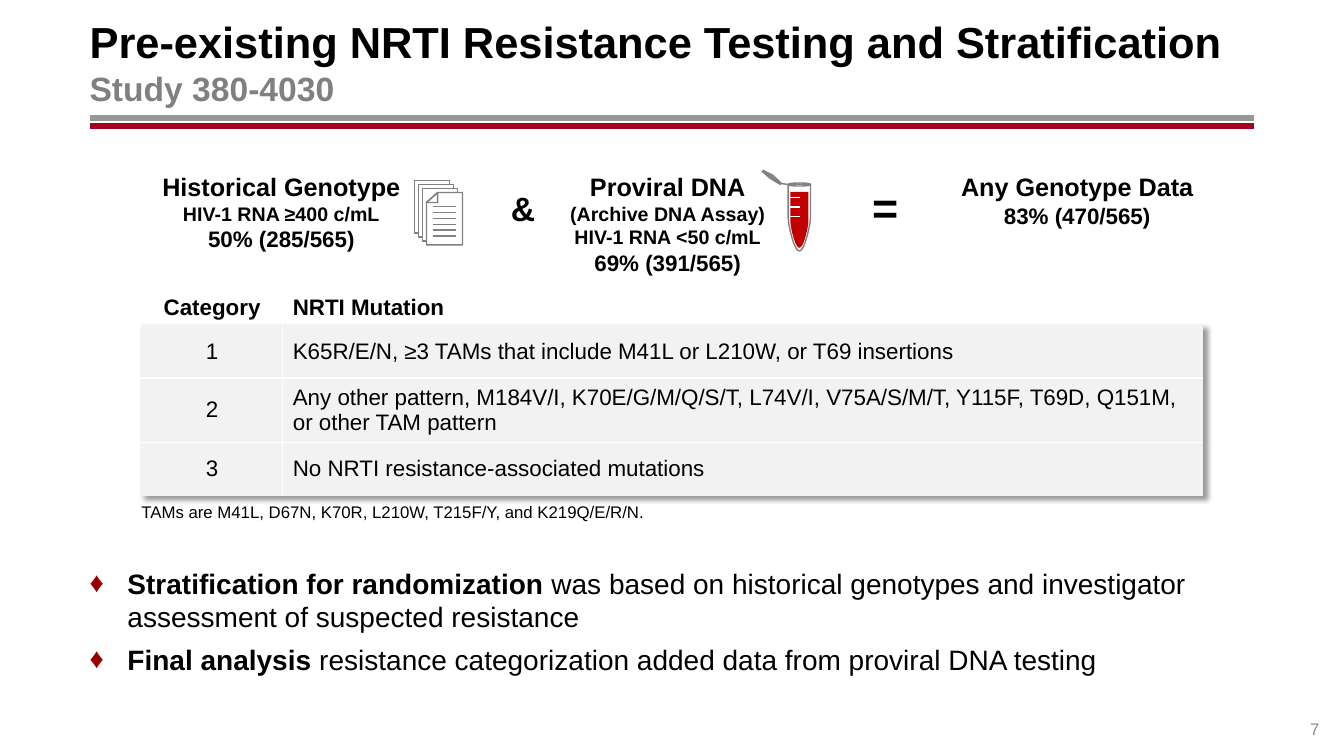
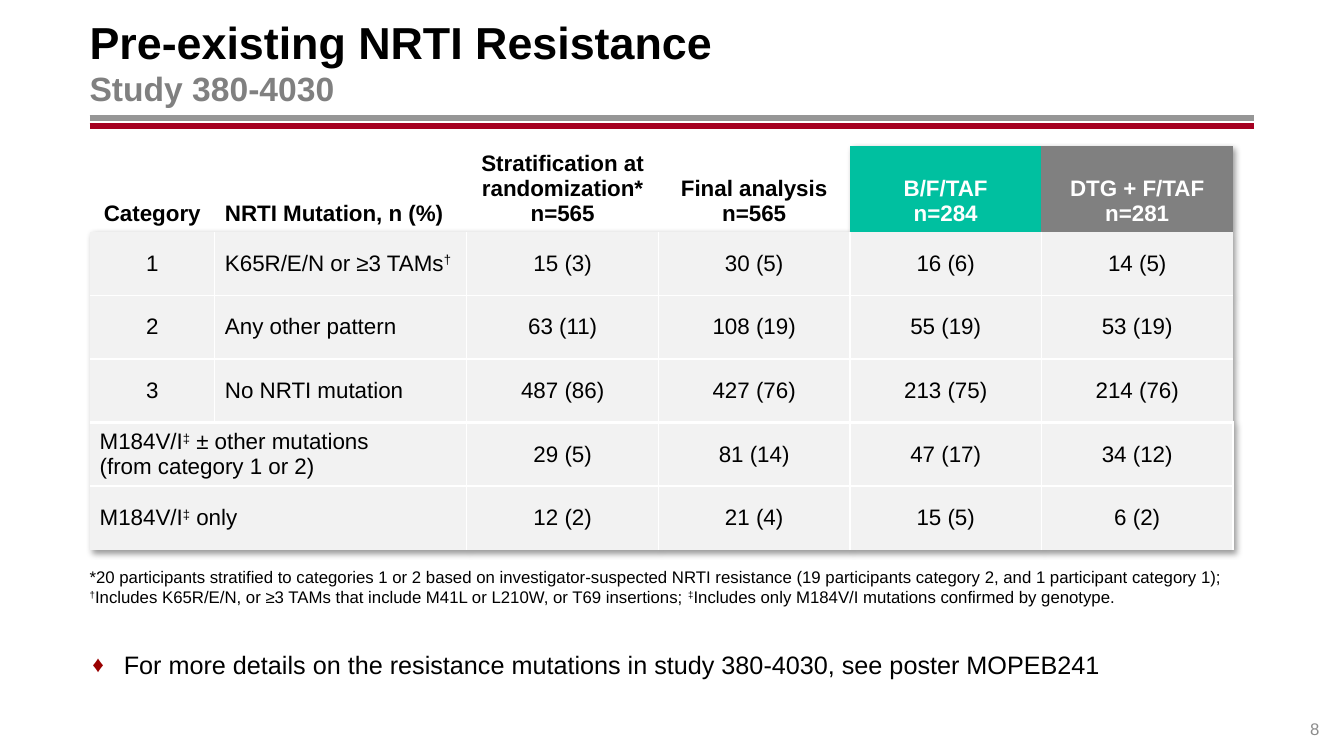
"""Build two slides on resistance testing and its results."""
from itertools import groupby

from lxml import etree
from pptx import Presentation
from pptx import util as u
from pptx.dml.color import RGBColor
from pptx.enum import shapes, text
from pptx.oxml.ns import qn

Pt = u.Pt
FONT = "Arial"
BLACK, WHITE, GRAY = "000000", "FFFFFF", "808080"
RED, RULE_GRAY, RULE_RED = "C00000", "969696", "A50021"
BULLET_RED, NUMBER_GRAY = "990000", "8C8C8C"
CELL_GRAY, TEAL = "F2F2F2", "00C0A0"
LEFT, WIDTH = 64, 832
NO_STYLE = "{2D5ABB26-0587-4C30-8999-92F81FD0307C}"
ALIGN = text.PP_ALIGN
ANCHOR = text.MSO_ANCHOR


def rgb(color):
    """Return the colour for a hex string."""
    return RGBColor.from_string(color)


def child(parent, tag, **attributes):
    """Append an XML element in the drawing namespace."""
    return etree.SubElement(parent, qn(f"a:{tag}"), **attributes)


def write(para, words, size=16, color=BLACK, bold=False):
    """Append text, raising dagger marks and breaking at newlines."""
    for index, line in enumerate(words.split("\n")):
        if index:
            child(para._p.add_br(), "rPr", sz=str(size * 100))
        for raised, letters in groupby(line, key=lambda letter: letter in "†‡"):
            span = para.add_run()
            span.text = "".join(letters)
            span.font.name = FONT
            span.font.size = Pt(size)
            span.font.bold = bold
            span.font.color.rgb = rgb(color)
            if raised:
                span.font._element.set("baseline", "30000")


def set_frame(frame, margins=(0, 0, 0, 0), anchor=ANCHOR.TOP, wrap=True):
    """Set the margins, anchor and wrapping of a text frame."""
    frame.auto_size = text.MSO_AUTO_SIZE.NONE
    frame.word_wrap = wrap
    frame.vertical_anchor = anchor
    (frame.margin_left, frame.margin_top,
     frame.margin_right, frame.margin_bottom) = map(Pt, margins)


def add_text(slide, place, paragraphs, align=ALIGN.LEFT, spacing=None, before=0,
             bullet=None, **layout):
    """Add a text box; each paragraph is a list of words and format pairs."""
    frame = slide.shapes.add_textbox(*map(Pt, place)).text_frame
    set_frame(frame, **layout)
    for index, spans in enumerate(paragraphs):
        para = frame.add_paragraph() if index else frame.paragraphs[0]
        para.alignment = align
        para.space_before = Pt(before)
        if spacing:
            para.line_spacing = spacing
        if bullet:
            add_bullet(para, **bullet)
        for words, style in spans:
            write(para, words, **style)


def add_bullet(para, indent, percent=100):
    """Give a paragraph a red diamond and a hanging indent."""
    props = para._p.get_or_add_pPr()
    props.set("marL", str(Pt(indent)))
    props.set("indent", str(-Pt(indent)))
    child(child(props, "buClr"), "srgbClr", val=BULLET_RED)
    child(props, "buSzPct", val=str(percent * 1000))
    child(props, "buFont", typeface=FONT)
    child(props, "buChar", char="♦")


def add_line(group, start, end, color=GRAY, width=1):
    """Add a straight line without shadow."""
    line = group.add_connector(shapes.MSO_CONNECTOR.STRAIGHT,
                               *map(Pt, (*start, *end)))
    line.line.color.rgb = rgb(color)
    line.line.width = Pt(width)
    child(line._element.spPr, "effectLst")


def paint(shape, fill=None, outline=GRAY):
    """Set the fill and outline of a shape."""
    shape.shadow.inherit = False
    if fill:
        shape.fill.solid()
        shape.fill.fore_color.rgb = rgb(fill)
    else:
        shape.fill.background()
    if outline:
        shape.line.color.rgb = rgb(outline)
        shape.line.width = Pt(1)
    else:
        shape.line.fill.background()


def add_outline(group, points, **colors):
    """Add a closed freeform through the points."""
    first, *others = [(Pt(x), Pt(y)) for x, y in points]
    builder = group.build_freeform(*first, scale=1.0)
    builder.add_line_segments(others, close=True)
    paint(builder.convert_to_shape(), **colors)


def curve(start, pull, push, end, steps=10):
    """Return points along a cubic curve."""
    points = []
    for step in range(steps + 1):
        t = step / steps
        weights = ((1 - t) ** 3, 3 * t * (1 - t) ** 2, 3 * t * t * (1 - t), t ** 3)
        points.append(tuple(
            sum(w * p for w, p in zip(weights, axis))
            for axis in zip(start, pull, push, end)))
    return points


def tube_points(center, half, top, side, bottom):
    """Return the outline of a tube with a rounded tip."""
    left = center - half
    wall = [(left, top)] + curve(
        (left, side), (left, side + 4), (center - half / 2, bottom), (center, bottom))
    return wall + [(2 * center - x, y) for x, y in reversed(wall)]


def add_tube(slide):
    """Draw the blood sample tube."""
    group = slide.shapes.add_group_shape().shapes
    add_outline(group, tube_points(571, 8, 131.5, 155.5, 179.3), fill=WHITE)
    add_outline(group, tube_points(571, 6.5, 137, 157.5, 177), fill=RED, outline=None)
    rim = group.add_shape(shapes.MSO_SHAPE.OVAL, *map(Pt, (563, 130.7, 16, 2.2)))
    paint(rim)
    lid = [(558, 131), (550.8, 126.7), (545, 121.7), (552.2, 125.3)]
    for shift in (0, 0.7):
        add_outline(group, [(x - shift, y + shift) for x, y in lid])
    add_line(group, (557.3, 131), (563, 131.8))
    for mark in range(3):
        height = 141 + 6.8 * mark
        add_line(group, (564.5, height), (571.5, height), color=WHITE)


def add_documents(slide):
    """Draw the stack of documents."""
    group = slide.shapes.add_group_shape().shapes
    for sheet in range(3):
        place = (296 + 2.9 * sheet, 129 + 2.9 * sheet, 25.2, 37.4)
        paint(group.add_shape(shapes.MSO_SHAPE.RECTANGLE, *map(Pt, place)), fill=WHITE)
    left, top, right, bottom = 304.6, 137.5, 330.3, 174.9
    fold = [(left, top + 7.2), (left + 8, top)]
    add_outline(group, fold + [(right, top), (right, bottom), (left, bottom)], fill=WHITE)
    add_outline(group, fold + [(left + 8, top + 7.2)])
    for row in range(6):
        height = 147.6 + 4.2 * row
        add_line(group, (309, height), (325.5, height))


def set_borders(cell, widths):
    """Draw white borders with widths keyed by side letter."""
    props = cell._tc.get_or_add_tcPr()
    for index, (side, width) in enumerate(widths.items()):
        line = child(props, f"ln{side}", w=str(Pt(width)))
        child(child(line, "solidFill"), "srgbClr", val=WHITE)
        props.insert(index, line)


def add_table_shadow(table):
    """Give a table no style and a soft shadow."""
    props = table._tbl.tblPr
    props.find(qn("a:tableStyleId")).text = NO_STYLE
    effects = child(props, "effectLst")
    shadow = child(effects, "outerShdw", blurRad=str(Pt(4)), dist=str(Pt(3)),
                   dir="2700000", algn="tl", rotWithShape="0")
    child(child(shadow, "srgbClr", val=BLACK), "alpha", val="40000")
    props.insert(0, effects)


def add_table(slide, place, widths, heights, rows, header_fills, thick):
    """Add a table; None joins a cell to the one on its left."""
    last_row, last_column = len(rows) - 1, len(widths) - 1
    frame = slide.shapes.add_table(len(rows), len(widths), *map(Pt, place),
                                   Pt(sum(widths)), Pt(sum(heights)))
    table = frame.table
    table.first_row = table.horz_banding = False
    add_table_shadow(table)
    for column, width in zip(table.columns, widths):
        column.width = Pt(width)
    for row, (height, values) in enumerate(zip(heights, rows)):
        table.rows[row].height = Pt(height)
        for column, value in enumerate(values):
            cell = table.cell(row, column)
            fill = CELL_GRAY if row else header_fills.get(column)
            if fill:
                cell.fill.solid()
                cell.fill.fore_color.rgb = rgb(fill)
            else:
                cell.fill.background()
            if row:
                sides = {"L": column > 0, "R": column < last_column,
                         "T": row > 1, "B": row < last_row}
                sizes = {"T": thick.get(row - 1, 1), "B": thick.get(row, 1)}
                set_borders(cell, {side: sizes.get(side, 1)
                                   for side, shown in sides.items() if shown})
            if value is None:
                table.cell(row, column - 1).merge(cell)
                continue
            cell.vertical_anchor = ANCHOR.MIDDLE if row else ANCHOR.BOTTOM
            para = cell.text_frame.paragraphs[0]
            joined = column < last_column and values[column + 1] is None
            para.alignment = ALIGN.LEFT if column == 1 or joined else ALIGN.CENTER
            colored_header = not row and column in header_fills
            write(para, value, bold=not row, color=WHITE if colored_header else BLACK)


def start_slide(deck, heading, size, number):
    """Add a slide with title, double rule and page number."""
    slide = deck.slides.add_slide(deck.slide_layouts[5])
    title = slide.shapes.title
    title.left, title.top, title.width, title.height = map(Pt, (LEFT, 13, WIDTH, 62))
    set_frame(title.text_frame, (0, 3.6, 7.2, 3.6), ANCHOR.MIDDLE)
    para = title.text_frame.paragraphs[0]
    para.alignment = ALIGN.LEFT
    write(para, heading + "\n", size=size, bold=True)
    write(para, "Study 380-4030", size=24, color=GRAY, bold=True)
    for height, color in ((84.2, RULE_GRAY), (90, RULE_RED)):
        add_line(slide.shapes, (LEFT, height), (LEFT + WIDTH, height), color, 4.25)
    add_text(slide, (896, 499, 46.5, 29), [[(str(number), {"size": 12, "color": NUMBER_GRAY})]],
             align=ALIGN.RIGHT, anchor=ANCHOR.BOTTOM)
    return slide


def add_testing_slide(deck):
    """Build the slide on testing and stratification."""
    slide = start_slide(deck, "Pre-existing NRTI Resistance Testing and Stratification", 31, 7)
    sources = [
        ((115, 119, 179, 66), [("Historical Genotype", 18), ("HIV-1 RNA ≥400 c/mL", 14),
                               ("50% (285/565)", 16)]),
        ((410, 119, 141, 82), [("Proviral DNA", 18), ("(Archive DNA Assay)", 14),
                               ("HIV-1 RNA <50 c/mL", 14), ("69% (391/565)", 16)]),
        ((685.5, 119, 175, 48), [("Any Genotype Data", 18), ("83% (470/565)", 16)]),
    ]
    for place, lines in sources:
        add_text(slide, place, [[(words, {"size": size, "bold": True})] for words, size in lines],
                 align=ALIGN.CENTER, margins=(0, 3.6, 7.2, 3.6), wrap=False)
    for sign, place, size in (("&", (365, 137.5, 17.3, 26), 24), ("=", (623, 133, 18.7, 34.5), 32)):
        add_text(slide, place, [[(sign, {"size": size, "bold": True})]], spacing=0.9, wrap=False)
    add_documents(slide)
    add_tube(slide)
    rows = [
        ("Category", "NRTI Mutation"),
        ("1", "K65R/E/N, ≥3 TAMs that include M41L or L210W, or T69 insertions"),
        ("2", "Any other pattern, M184V/I, K70E/G/M/Q/S/T, L74V/I, V75A/S/M/T, Y115F, T69D, "
              "Q151M, or other TAM pattern"),
        ("3", "No NRTI resistance-associated mutations"),
    ]
    add_table(slide, (101, 206), (101, 657.5), (26, 38, 46, 38), rows, {}, {})
    add_text(slide, (101, 360, 728, 20),
             [[("TAMs are M41L, D67N, K70R, L210W, T215F/Y, and K219Q/E/R/N.", {"size": 12})]],
             spacing=0.9)
    points = [("Stratification for randomization ", "was based on historical genotypes and "
               "investigator assessment of suspected resistance"),
              ("Final analysis ", "resistance categorization added data from proviral DNA testing")]
    add_text(slide, (LEFT, 401, WIDTH, 98),
             [[(lead, {"size": 20, "bold": True}), (rest, {"size": 20})] for lead, rest in points],
             before=6, bullet={"indent": 27}, margins=(0, 3.6, 0, 3.6))


def add_results_slide(deck):
    """Build the slide on resistance by category."""
    slide = start_slide(deck, "Pre-existing NRTI Resistance", 32, 8)
    rows = [
        ("Category", "NRTI Mutation, n (%)", "Stratification at randomization*\nn=565",
         "Final analysis\nn=565", "B/F/TAF\nn=284", "DTG + F/TAF\nn=281"),
        ("1", "K65R/E/N or ≥3 TAMs†", "15 (3)", "30 (5)", "16 (6)", "14 (5)"),
        ("2", "Any other pattern", "63 (11)", "108 (19)", "55 (19)", "53 (19)"),
        ("3", "No NRTI mutation", "487 (86)", "427 (76)", "213 (75)", "214 (76)"),
        ("M184V/I‡ ± other mutations\n(from category 1 or 2)", None,
         "29 (5)", "81 (14)", "47 (17)", "34 (12)"),
        ("M184V/I‡ only", None, "12 (2)", "21 (4)", "15 (5)", "6 (2)"),
    ]
    add_table(slide, (LEFT, 104.4), (89.5, 180) + (136.8,) * 4, (61,) + (45.5,) * 5, rows,
              {4: TEAL, 5: GRAY}, {3: 3, 4: 1.5})
    note = ("*20 participants stratified to categories 1 or 2 based on investigator-suspected NRTI "
            "resistance (19 participants category 2, and 1 participant category 1); "
            "†Includes K65R/E/N, or ≥3 TAMs that include M41L or L210W, or T69 insertions; "
            "‡Includes only M184V/I mutations confirmed by genotype.")
    add_text(slide, (LEFT, 397.5, WIDTH, 36), [[(note, {"size": 12})]], anchor=ANCHOR.BOTTOM)
    pointer = "For more details on the resistance mutations in study 380-4030, see poster MOPEB241"
    add_text(slide, (66, 466, 845, 19.5), [[(pointer, {"size": 18})]], spacing=0.9, before=12,
             bullet={"indent": 22.5, "percent": 90})


def main():
    """Build and save the deck."""
    deck = Presentation()
    deck.slide_width, deck.slide_height = Pt(960), Pt(540)
    add_testing_slide(deck)
    add_results_slide(deck)
    deck.save("out.pptx")


if __name__ == "__main__":
    main()
